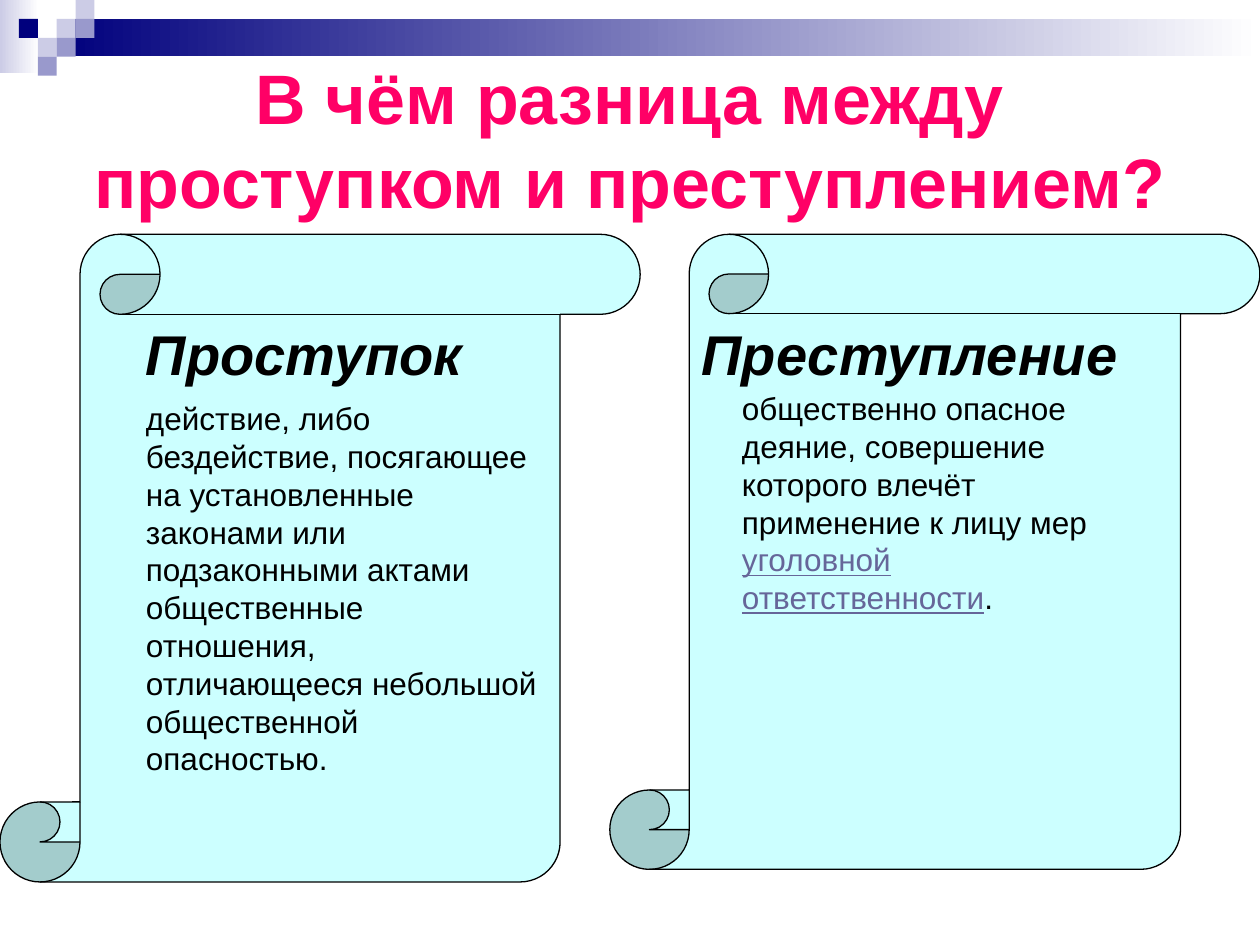
from lxml import etree
from pptx import Presentation
from pptx.dml.color import RGBColor
from pptx.enum import shapes, text
from pptx.util import Pt

NAVY = RGBColor(0x00, 0x00, 0x7D)
LAVENDER = RGBColor(0xCC, 0xCC, 0xE6)
PERIWINKLE = RGBColor(0x99, 0x99, 0xCC)
WHITE = RGBColor(0xFF, 0xFF, 0xFF)
BLACK = RGBColor(0x00, 0x00, 0x00)
PINK = RGBColor(0xFF, 0x00, 0x66)
PALE_CYAN = RGBColor(0xCC, 0xFF, 0xFF)
LINK = RGBColor(0x66, 0x66, 0x99)

prs = Presentation()
prs.slide_width, prs.slide_height = Pt(720), Pt(540)
slide = prs.slides.add_slide(prs.slide_layouts[6])


def add_block(kind, left, top, width, height):
    block = slide.shapes.add_shape(kind, Pt(left), Pt(top), Pt(width), Pt(height))
    block.shadow.inherit = False
    block.line.fill.background()
    return block


def write(frame, runs, size, color, bold=False, italic=False):
    """Fill the frame with one paragraph of runs in a common font."""
    frame.word_wrap = True
    paragraph = frame.paragraphs[0]
    paragraph.alignment = text.PP_ALIGN.LEFT
    font = paragraph.font
    font.name, font.size = "Arial", Pt(size)
    font.bold, font.italic = bold, italic
    font.color.rgb = color
    for words in runs:
        paragraph.add_run().text = words
    return paragraph


# Header decoration: two fading bands and a mosaic of small squares
for left, top, width, height, start in [
    (0, 0, 22.3, 41.8, LAVENDER),
    (32.4, 10.8, 687.6, 21.4, NAVY),
]:
    band = add_block(shapes.MSO_SHAPE.RECTANGLE, left, top, width, height)
    band.fill.gradient()
    band.fill.gradient_angle = 0
    for stop, color in zip(band.fill.gradient_stops, (start, WHITE)):
        stop.color.rgb = color

TILE = 10.8
for column, row, color in [
    (3, 1, LAVENDER),
    (4, 0, LAVENDER),
    (4, 1, PERIWINKLE),
    (2, 2, LAVENDER),
    (1, 1, NAVY),
    (3, 2, PERIWINKLE),
    (2, 3, PERIWINKLE),
]:
    tile = add_block(shapes.MSO_SHAPE.RECTANGLE, column * TILE, row * TILE, TILE, TILE)
    tile.fill.solid()
    tile.fill.fore_color.rgb = color

# Title
title = slide.shapes.add_textbox(Pt(36), Pt(36), Pt(648), Pt(86.4)).text_frame
title.vertical_anchor = text.MSO_ANCHOR.MIDDLE
question = write(title, ["В чём разница между проступком и преступлением?"], 40, PINK, bold=True)
question.alignment = text.PP_ALIGN.CENTER

# Scrolls: the crime on the right, the misdemeanour on the left
scrolls = []
for left, width, height in [(348.5, 371.5, 362.9), (0, 365.8, 370.1)]:
    scroll = add_block(shapes.MSO_SHAPE.VERTICAL_SCROLL, left, 133.9, width, height)
    scroll.adjustments[0] = 0.125
    scroll.fill.solid()
    scroll.fill.fore_color.rgb = PALE_CYAN
    scroll.line.color.rgb = BLACK
    scroll.line.width = Pt(0.75)
    scrolls.append(scroll)

crime_heading = scrolls[0].text_frame
crime_heading.vertical_anchor = text.MSO_ANCHOR.TOP
write(crime_heading, ["Преступление"], 32, BLACK, bold=True, italic=True)

misdemeanour_heading = slide.shapes.add_textbox(Pt(76.3), Pt(179.3), Pt(232.6), Pt(45.4))
write(misdemeanour_heading.text_frame, ["Проступок"], 32, BLACK, bold=True, italic=True)

# Definitions
misdemeanour = slide.shapes.add_textbox(Pt(76.3), Pt(224.6), Pt(238.3), Pt(223.2))
write(misdemeanour.text_frame, [
    "действие, либо бездействие, посягающее на установленные законами или "
    "подзаконными актами общественные отношения, отличающееся небольшой "
    "общественной опасностью."
], 18, BLACK)

crime = slide.shapes.add_textbox(Pt(416.9), Pt(218.9), Pt(244.1), Pt(136.8))
definition = write(crime.text_frame, [
    "общественно опасное деяние, совершение которого влечёт применение к лицу мер ",
    "уголовной ответственности",
    ".",
], 18, BLACK)
liability = definition.runs[1].font
liability.color.rgb = LINK
liability.underline = True

prs.save("out.pptx")
